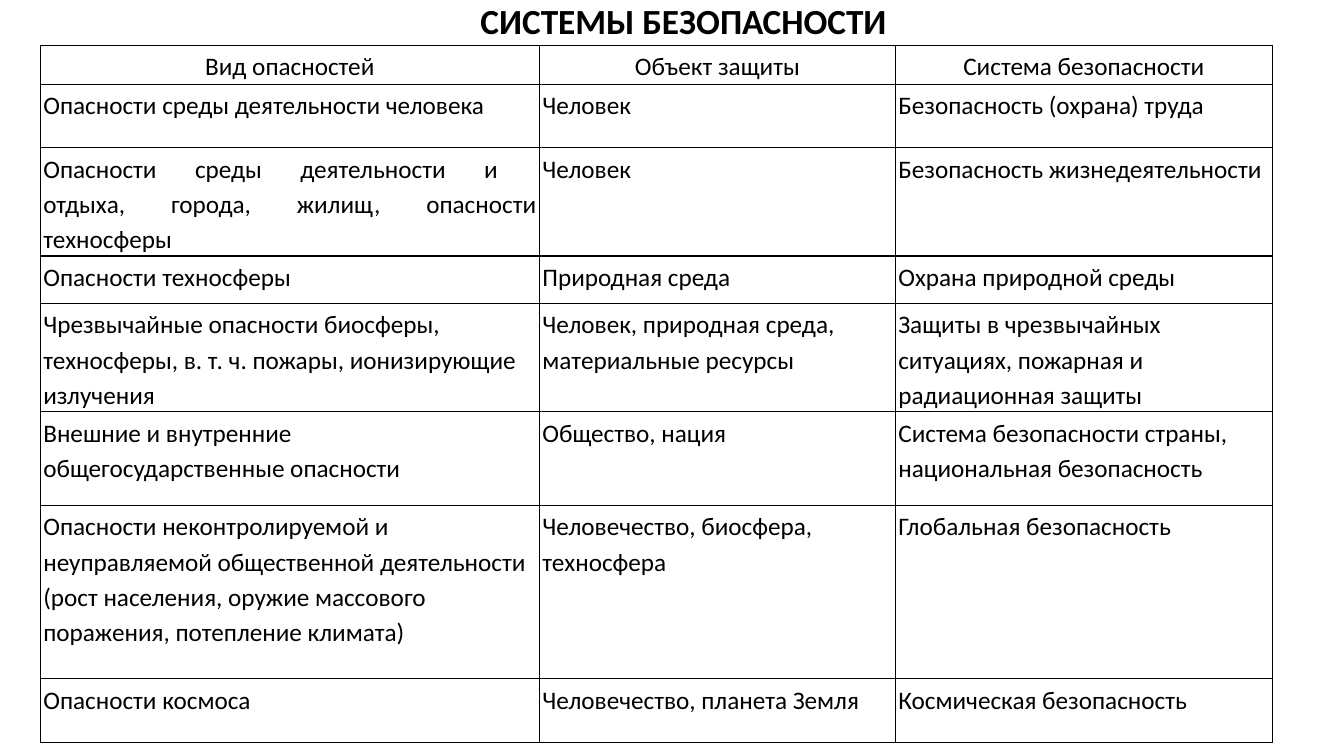
import pptx
import pptx.dml.color
import pptx.enum.text
import pptx.oxml
import pptx.oxml.ns
import pptx.util

Inches = pptx.util.Inches
Pt = pptx.util.Pt
ALIGN = pptx.enum.text.PP_ALIGN
ANCHOR = pptx.enum.text.MSO_ANCHOR

COLORS = {"ink": "000000", "paper": "FFFFFF"}
TITLE_FONT = {"name": "Calibri", "size": Pt(25.2), "bold": True}
CELL_FONT = {"name": "Calibri", "size": Pt(18), "bold": False}
TITLE_FRAME = {"word_wrap": True, "vertical_anchor": ANCHOR.MIDDLE}
CELL_FORMAT = {
    "margin_left": Inches(0.03), "margin_right": Inches(0.03),
    "margin_top": Inches(0.02), "margin_bottom": Inches(0.02),
    "vertical_anchor": ANCHOR.TOP,
}

COLUMN_WIDTHS = [4.95, 3.53, 3.74]
ROW_HEIGHTS = [0.37, 0.63, 1.05, 0.47, 1.05, 0.93, 1.72, 0.63]

# Each row: one alignment letter per column, then the three texts
ALIGNMENTS = {"c": ALIGN.CENTER, "l": ALIGN.LEFT, "j": ALIGN.JUSTIFY}
SAFETY_ROWS = [
    ("ccc", "Вид опасностей", "Объект защиты", "Система безопасности"),
    ("ljl", "Опасности среды деятельности человека", "Человек",
     "Безопасность (охрана) труда"),
    ("jjl", "Опасности среды деятельности и \vотдыха, города, жилищ, опасности техносферы",
     "Человек", "Безопасность жизнедеятельности"),
    ("jll", "Опасности техносферы", "Природная среда", "Охрана природной среды"),
    ("lll", "Чрезвычайные опасности биосферы, техносферы, в. т. ч. пожары, ионизирующие излучения",
     "Человек, природная среда, материальные ресурсы",
     "Защиты в чрезвычайных ситуациях, пожарная и радиационная защиты"),
    ("ljl", "Внешние и внутренние общегосударственные опасности", "Общество, нация",
     "Система безопасности страны, национальная безопасность"),
    ("lll", "Опасности неконтролируемой и неуправляемой общественной деятельности "
     "(рост населения, оружие массового поражения, потепление климата)",
     "Человечество, биосфера, техносфера", "Глобальная безопасность"),
    ("jjl", "Опасности космоса", "Человечество, планета Земля", "Космическая безопасность"),
]


def apply_format(target, values):
    for name, value in values.items():
        setattr(target, name, value)


def write_text(frame, text, font, alignment, line_spacing):
    paragraph = frame.paragraphs[0]
    paragraph.text = text
    apply_format(paragraph, {"alignment": alignment, "line_spacing": line_spacing})
    for run in paragraph.runs:
        apply_format(run.font, font)
        run.font.color.rgb = pptx.dml.color.RGBColor.from_string(COLORS["ink"])


def add_title(slide, text):
    title = slide.shapes.add_textbox(Inches(1.07), Inches(-0.09), Inches(11.42), Inches(0.64))
    apply_format(title.text_frame, TITLE_FRAME)
    write_text(title.text_frame, text, TITLE_FONT, ALIGN.CENTER, 0.9)


def add_borders(cell):
    properties = cell._tc.get_or_add_tcPr()
    for side in ("lnL", "lnR", "lnT", "lnB"):
        properties.append(pptx.oxml.parse_xml(
            f'<a:{side} {pptx.oxml.ns.nsdecls("a")} w="{Pt(1)}"><a:solidFill>'
            f'<a:srgbClr val="{COLORS["ink"]}"/></a:solidFill></a:{side}>'))


def fill_cell(cell, text, alignment):
    apply_format(cell, CELL_FORMAT)
    write_text(cell.text_frame, text, CELL_FONT, alignment, 1.15)
    add_borders(cell)
    cell.fill.background()


def add_safety_table(slide):
    table = slide.shapes.add_table(
        len(ROW_HEIGHTS), len(COLUMN_WIDTHS), Inches(0.4), Inches(0.45),
        Inches(sum(COLUMN_WIDTHS)), Inches(sum(ROW_HEIGHTS))).table
    apply_format(table, {"first_row": False, "horz_banding": False})
    for column, width in zip(table.columns, COLUMN_WIDTHS):
        column.width = Inches(width)
    for row, height, (letters, *texts) in zip(table.rows, ROW_HEIGHTS, SAFETY_ROWS):
        row.height = Inches(height)
        for cell, letter, text in zip(row.cells, letters, texts):
            fill_cell(cell, text, ALIGNMENTS[letter])


def main():
    presentation = pptx.Presentation()
    presentation.slide_width = Inches(13.33)
    presentation.slide_height = Inches(7.5)
    slide = presentation.slides.add_slide(presentation.slide_layouts[6])

    # Background
    background = slide.background.fill
    background.solid()
    background.fore_color.rgb = pptx.dml.color.RGBColor.from_string(COLORS["paper"])

    # Heading and table
    add_title(slide, "СИСТЕМЫ БЕЗОПАСНОСТИ")
    add_safety_table(slide)
    presentation.save("out.pptx")


if __name__ == "__main__":
    main()
